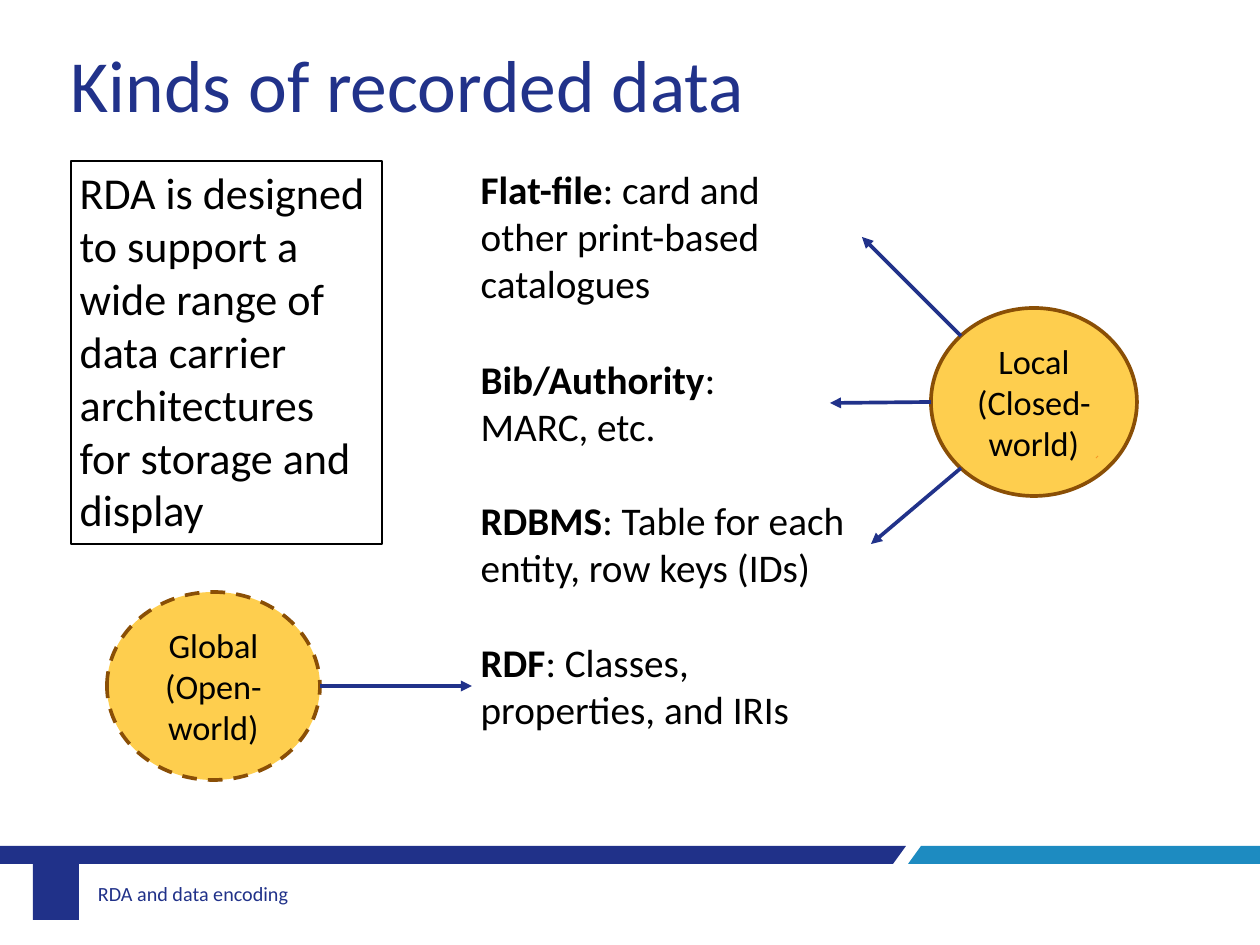
import lxml.etree
import pptx
import pptx.dml.color
import pptx.enum.dml
import pptx.enum.shapes
import pptx.enum.text
import pptx.oxml.ns
import pptx.util

PX = pptx.util.Inches(1) / 88.2
NAVY, BLUE, BLACK = "203189", "1D8BC1", "000000"
INK, GOLD, BROWN = "21328A", "FECE4E", "8A4F06"
SHAPE = pptx.enum.shapes.MSO_SHAPE
ALIGN = pptx.enum.text.PP_ALIGN
ANCHOR = pptx.enum.text.MSO_ANCHOR
FIT = pptx.enum.text.MSO_AUTO_SIZE.SHAPE_TO_FIT_TEXT
DASH = pptx.enum.dml.MSO_LINE.DASH


def emu(*nums):
    return [round(num * PX) for num in nums]


def tint(code):
    return pptx.dml.color.RGBColor.from_string(code)


def apply(item, form):
    for name, val in form.items():
        setattr(item, name, val)


class Deck:
    def __init__(self, wide, high):
        self.show = pptx.Presentation()
        apply(self.show, dict(zip(("slide_width", "slide_height"), emu(wide, high))))
        self.slide = self.show.slides.add_slide(self.show.slide_layouts[5])
        self.items = self.slide.shapes
        self.font = "Calibri"

    def fill_text(self, item, paras, size, color=BLACK, align=ALIGN.LEFT, **form):
        frame = item.text_frame
        apply(frame, {"word_wrap": True, "auto_size": FIT,
                      "vertical_anchor": ANCHOR.TOP, **form})
        for num, runs in enumerate(paras):
            para = frame.add_paragraph() if num else frame.paragraphs[0]
            para.alignment = align
            for text, bold in runs:
                run = para.add_run()
                run.text = text
                apply(run.font, {"name": self.font, "bold": bold,
                                 "size": pptx.util.Pt(size)})
                run.font.color.rgb = tint(color)

    def title(self, text, box):
        item = self.items.title
        apply(item, dict(zip(("left", "top", "width", "height"), emu(*box))))
        self.fill_text(item, [[(text, False)]], 60, INK, word_wrap=False)

    def text(self, box, runs, size, color=BLACK, **form):
        item = self.items.add_textbox(*emu(*box))
        self.fill_text(item, [runs], size, color, **form)
        return item

    def paint(self, item, fill=None, edge=None, width=1, dash=None):
        item.shadow.inherit = False
        if fill:
            item.fill.solid()
            item.fill.fore_color.rgb = tint(fill)
        else:
            item.fill.background()
        if edge:
            item.line.color.rgb = tint(edge)
            apply(item.line, {"width": pptx.util.Pt(width), "dash_style": dash})
        else:
            item.line.fill.background()
        return item

    def shape(self, kind, box, **look):
        return self.paint(self.items.add_shape(kind, *emu(*box)), **look)

    def bar(self, points, fill):
        form = self.items.build_freeform(*points[0], scale=PX)
        form.add_line_segments(points[1:], close=True)
        self.paint(form.convert_to_shape(), fill)

    def oval(self, box, lines, dash=None):
        item = self.shape(SHAPE.OVAL, box, fill=GOLD, edge=BROWN, width=3, dash=dash)
        self.fill_text(item, [[(line, False)] for line in lines], 28,
                       align=ALIGN.CENTER, vertical_anchor=ANCHOR.MIDDLE)

    def line(self, start, end, color, width, goal=None, side=0):
        item = self.items.add_connector(
            pptx.enum.shapes.MSO_CONNECTOR.STRAIGHT, *emu(*start, *end))
        item.line.color.rgb = tint(color)
        item.line.width = pptx.util.Pt(width)
        props = item.element.spPr
        name = pptx.oxml.ns.qn
        if goal is not None:
            item.end_connect(goal, side)
            lxml.etree.SubElement(props.find(name("a:ln")), name("a:tailEnd"),
                                  type="triangle")
        lxml.etree.SubElement(props, name("a:effectLst"))


def main():
    deck = Deck(1260, 945)
    deck.bar([(906, 846), (0, 846), (0, 864), (893, 864)], NAVY)
    deck.bar([(1260, 846), (921, 846), (908, 864), (1260, 864)], BLUE)
    deck.shape(SHAPE.RECTANGLE, (33, 846, 46, 74), fill=NAVY)
    side, edge = emu(6, 4)
    deck.text((92, 869, 323, 48), [("RDA and data encoding", False)], 16.4, NAVY,
              vertical_anchor=ANCHOR.MIDDLE, margin_left=side, margin_right=side,
              margin_top=edge, margin_bottom=edge,
              auto_size=pptx.enum.text.MSO_AUTO_SIZE.NONE)
    deck.title("Kinds of recorded data", (62, 35, 698, 98))

    note = deck.shape(SHAPE.RECTANGLE, (71, 161, 311, 383), edge=BLACK, width=1.5)
    deck.fill_text(note, [[("RDA is designed to support a wide range of data carrier "
                            "architectures for storage and display", False)]], 36)

    kinds = [
        (161, 390, 152, "Flat-file", ": card and other print-based catalogues"),
        (351, 358, 104, "Bib/Authority", ": MARC, etc."),
        (492, 399, 104, "RDBMS", ": Table for each entity, row keys (IDs)"),
        (634, 358, 104, "RDF", ": Classes, properties, and IRIs"),
    ]
    boxes = [deck.text((472, top, wide, high), [(head, True), (rest, False)], 32)
             for top, wide, high, head, rest in kinds]

    deck.oval((931, 308, 206, 188), ["Local", "(Closed-world)"])
    deck.oval((107, 592, 213, 188), ["Global (Open-world)"], DASH)

    starts = [(961, 336), (931, 402), (961, 468), (320, 686)]
    for start, box, side in zip(starts, boxes, (3, 3, 3, 1)):
        deck.line(start, start, INK, 3, box, side)
    deck.line((1096, 458), (1098, 456), "F49827", 0.75)
    deck.show.save("out.pptx")


if __name__ == "__main__":
    main()
